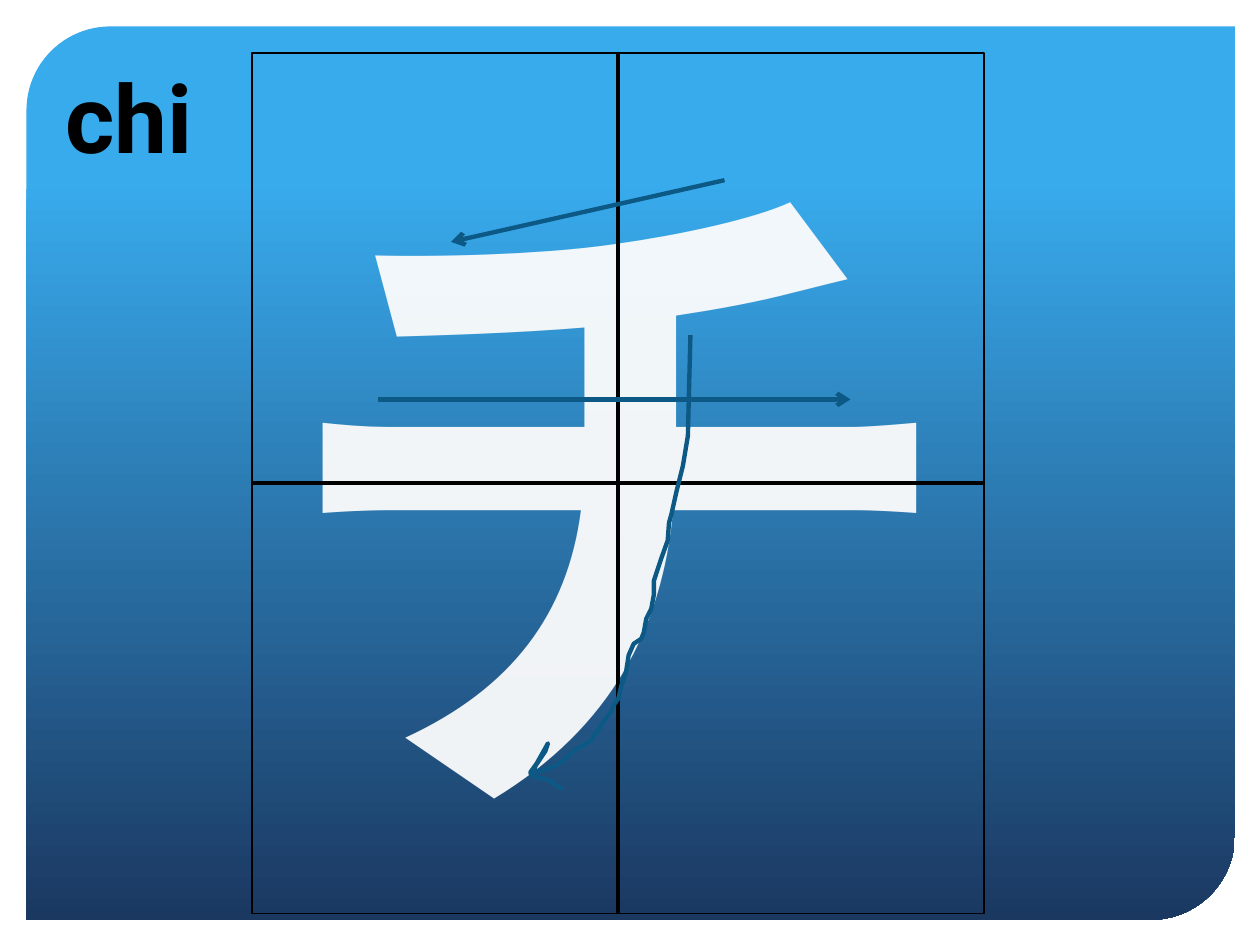
from typing import NamedTuple

from lxml import etree
from pptx import Presentation
from pptx import util as u
from pptx.dml.color import RGBColor
from pptx.enum import shapes, text
from pptx.oxml.ns import qn

SKY = RGBColor(0x38, 0xAB, 0xED)
NAVY = RGBColor(0x1B, 0x38, 0x61)
BLACK = RGBColor(0, 0, 0)
KANA_WHITE = RGBColor(0xFC, 0xFC, 0xFC)
KANA_EDGE = RGBColor(0x02, 0x12, 0x1B)
STROKE_BLUE = RGBColor(0x0C, 0x59, 0x86)
GUIDE_WIDTH = 2.5


class Box(NamedTuple):
    left: float
    top: float
    width: float
    height: float


class Stroke(NamedTuple):
    start: tuple[float, float]
    end: tuple[float, float]


PANEL = Box(0.21, 0.21, 9.59, 7.09)
FRAME = Box(2, 0.42, 5.81, 6.83)
ROMAJI = Box(0.42, 0.42, 1.21, 1.01)
STRAIGHT_STROKES = [Stroke((5.75, 1.43), (3.58, 1.92)),
                    Stroke((3, 3.17), (6.75, 3.17))]
# Third stroke, drawn by hand down to its own arrowhead
CURVED_STROKE = [
    (5.48, 2.66), (5.47, 3.06), (5.46, 3.46), (5.42, 3.7), (5.4, 3.78),
    (5.37, 3.9), (5.35, 3.99), (5.33, 4.08), (5.31, 4.15), (5.3, 4.29),
    (5.25, 4.43), (5.19, 4.61), (5.19, 4.72), (5.17, 4.83), (5.13, 4.91),
    (5.11, 5.02), (5.09, 5.07), (5.03, 5.11), (4.99, 5.2), (4.97, 5.33),
    (4.93, 5.45), (4.91, 5.54), (4.87, 5.6), (4.85, 5.65), (4.81, 5.7),
    (4.73, 5.82), (4.69, 5.88), (4.62, 5.92), (4.55, 5.96), (4.48, 6.03),
    (4.41, 6.08), (4.29, 6.12), (4.24, 6.13), (4.23, 6.16), (4.25, 6.08),
    (4.33, 5.96), (4.35, 5.9), (4.26, 6.06), (4.21, 6.13), (4.22, 6.16),
    (4.31, 6.18), (4.37, 6.2), (4.42, 6.24), (4.47, 6.26),
]


def inches(values) -> list[u.Length]:
    return [u.Inches(value) for value in values]


def set_line(shape, color: RGBColor, width: float) -> None:
    shape.line.color.rgb = color
    shape.line.width = u.Pt(width)


def write(shape, wording: str, font_format: dict, frame_format: dict):
    """Put one centred run in a shape and return the run."""
    for name, value in frame_format.items():
        setattr(shape.text_frame, name, value)
    paragraph = shape.text_frame.paragraphs[0]
    paragraph.alignment = text.PP_ALIGN.CENTER
    run = paragraph.add_run()
    run.text = wording
    for name, value in font_format.items():
        setattr(run.font, name, value)
    return run


def add_line(slide, stroke: Stroke, color: RGBColor, arrow: bool = False):
    line = slide.shapes.add_connector(
        shapes.MSO_CONNECTOR.STRAIGHT, *inches(stroke.start + stroke.end))
    set_line(line, color, GUIDE_WIDTH)
    if arrow:
        etree.SubElement(line.line._get_or_add_ln(), qn("a:tailEnd"), type="arrow")
    etree.SubElement(line.element.spPr, qn("a:effectLst"))
    return line


def add_alpha(solid_fill, percent: int) -> None:
    etree.SubElement(solid_fill[0], qn("a:alpha"), val=str(percent * 1000))


def style_kana(run) -> None:
    """Give the kana its faint outline, transparency, spacing and Asian font."""
    properties = run.font._element
    properties.set("spc", "50")
    add_alpha(properties.find(qn("a:solidFill")), 95)
    outline = etree.Element(qn("a:ln"), w=str(u.Pt(1.06)))
    edge = etree.SubElement(outline, qn("a:solidFill"))
    etree.SubElement(edge, qn("a:srgbClr"), val=str(KANA_EDGE))
    add_alpha(edge, 6)
    properties.insert(0, outline)
    latin = properties.find(qn("a:latin"))
    latin.addnext(etree.Element(qn("a:ea"), typeface=run.font.name))


def add_panel(slide) -> None:
    panel = slide.shapes.add_shape(
        shapes.MSO_SHAPE.ROUND_2_DIAG_RECTANGLE, *inches(PANEL))
    panel.shadow.inherit = False
    panel.adjustments[0], panel.adjustments[1] = 0.094, 0
    panel.line.fill.background()
    panel.fill.gradient()
    panel.fill.gradient_angle = 270
    for stop, position, color in zip(
            panel.fill.gradient_stops, (0.17, 1), (SKY, NAVY)):
        stop.position = position
        stop.color.rgb = color
    # The panel lies behind the title
    slide.shapes.title.element.addprevious(panel.element)


def add_kana_frame(slide):
    frame = slide.shapes.add_shape(shapes.MSO_SHAPE.RECTANGLE, *inches(FRAME))
    frame.shadow.inherit = False
    frame.fill.background()
    set_line(frame, BLACK, 0.75)
    kana = write(
        frame, "チ",
        {"size": u.Pt(400), "bold": True, "name": "Noto Sans CJK JP"},
        {"word_wrap": False, "auto_size": text.MSO_AUTO_SIZE.NONE,
         "vertical_anchor": text.MSO_ANCHOR.MIDDLE,
         "margin_bottom": u.Inches(0.13)})
    kana.font.color.rgb = KANA_WHITE
    style_kana(kana)
    return frame


def add_guides(slide, frame) -> None:
    left, top, width, height = FRAME
    middle_x, middle_y = left + width / 2, top + height / 2
    guides = [
        (Stroke((middle_x, top), (middle_x, top + height)), 0, 2),
        (Stroke((left, middle_y), (left + width, middle_y)), 1, 3),
    ]
    for stroke, start_side, end_side in guides:
        guide = add_line(slide, stroke, BLACK)
        guide.begin_connect(frame, start_side)
        guide.end_connect(frame, end_side)


def add_romaji(slide) -> None:
    title = slide.shapes.title
    title.left, title.top, title.width, title.height = inches(ROMAJI)
    romaji = write(
        title, "chi", {"size": u.Pt(54), "bold": True, "name": "Roboto"},
        {"word_wrap": False, "auto_size": text.MSO_AUTO_SIZE.NONE,
         "vertical_anchor": text.MSO_ANCHOR.TOP,
         "margin_left": 0, "margin_right": 0})
    romaji.font.color.rgb = BLACK


def add_curved_stroke(slide) -> None:
    first, *rest = [tuple(inches(point)) for point in CURVED_STROKE]
    builder = slide.shapes.build_freeform(*first)
    builder.add_line_segments(rest, close=False)
    curve = builder.convert_to_shape()
    curve.shadow.inherit = False
    curve.fill.background()
    set_line(curve, STROKE_BLUE, GUIDE_WIDTH)


def main() -> None:
    deck = Presentation()
    deck.slide_width, deck.slide_height = inches((10, 7.5))
    slide = deck.slides.add_slide(deck.slide_layouts.get_by_name("Title Only"))

    # Background panel and reading
    add_panel(slide)
    add_romaji(slide)

    # Kana in its practice grid
    frame = add_kana_frame(slide)
    add_guides(slide, frame)

    # Stroke order
    for stroke in STRAIGHT_STROKES:
        add_line(slide, stroke, STROKE_BLUE, arrow=True)
    add_curved_stroke(slide)

    deck.save("out.pptx")


if __name__ == "__main__":
    main()
